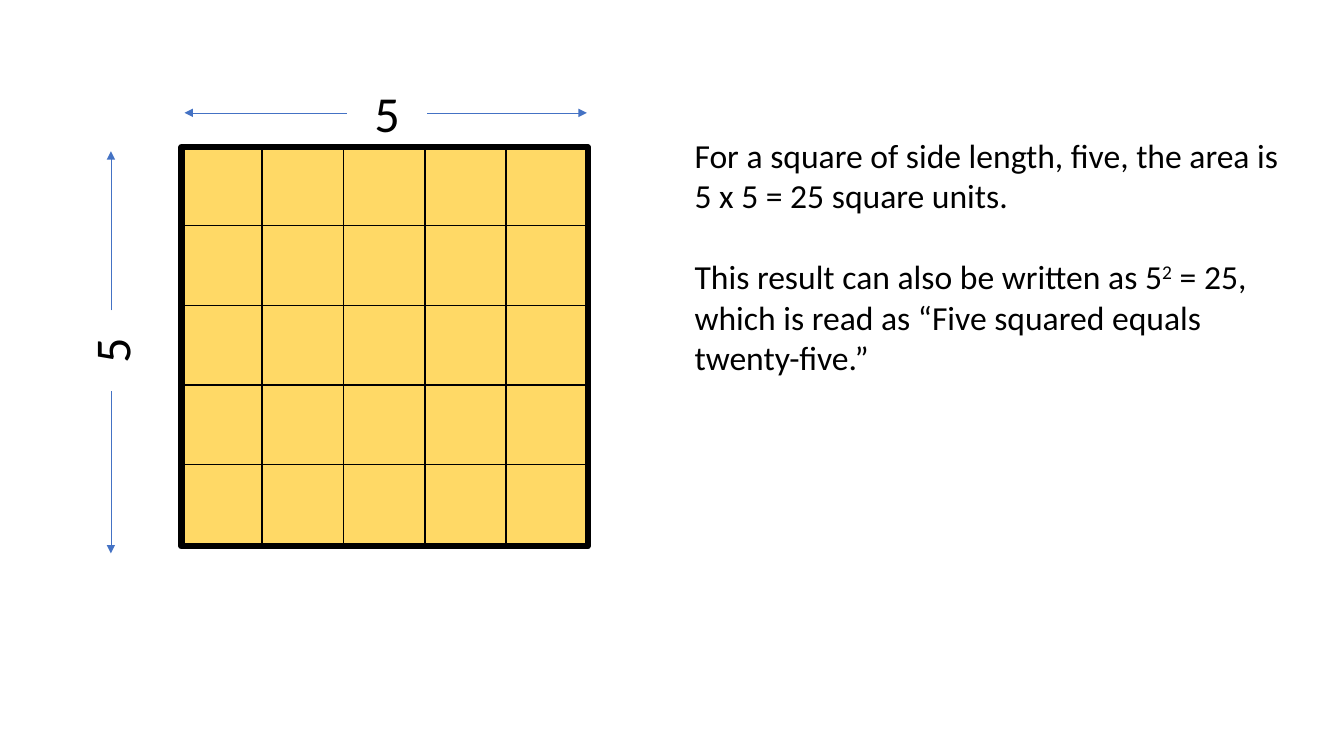
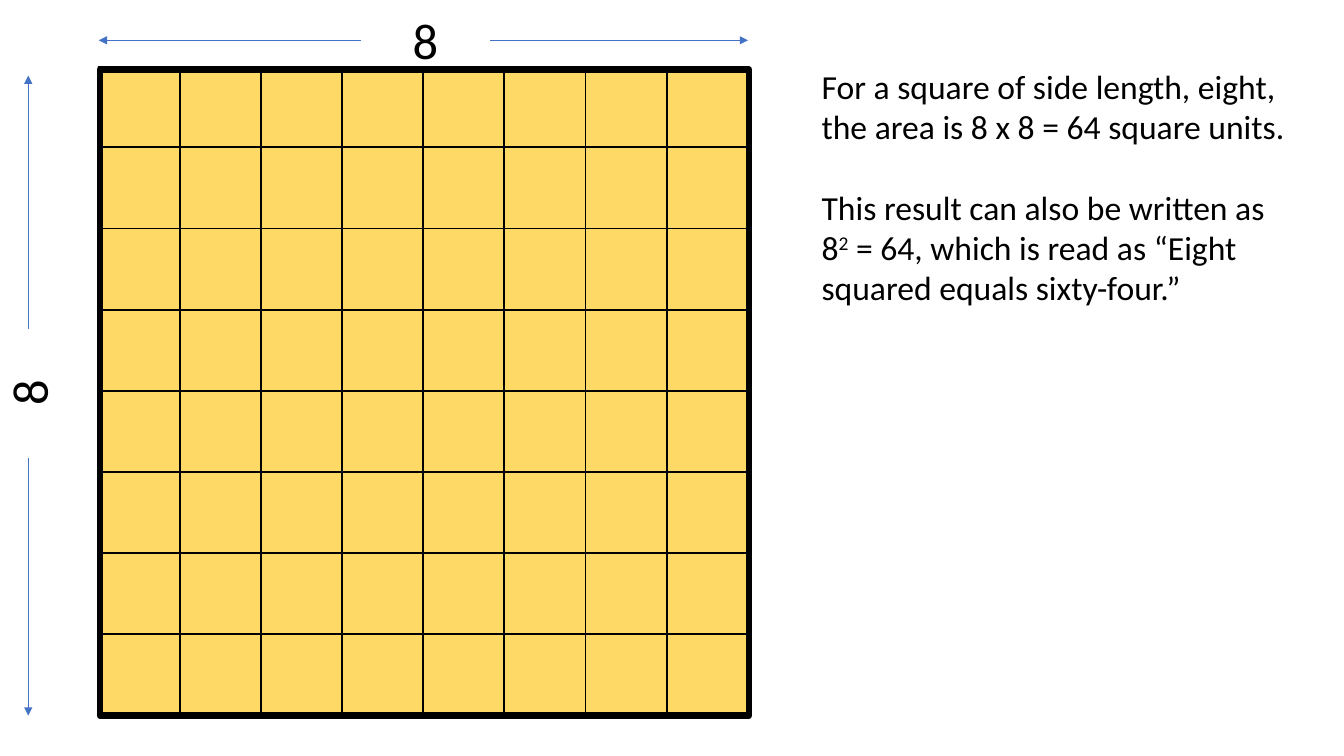
import pptx
import pptx.util
import pptx.dml.color
import pptx.enum.shapes
import pptx.enum.text
import lxml.etree
from dataclasses import dataclass

Inch = pptx.util.Inches
Pt = pptx.util.Pt

# Content: lengths in inches; spans are (start, end) of each measuring arrow
SLIDES = [
    dict(
        side=5, grid=(1.8, 1.45), pitch=(0.805, 0.79),
        frame=(1.8, 1.46, 4.03, 3.96), gap=0.8,
        across=dict(mid=(3.84, 1.12), span=(1.83, 5.82)),
        down=dict(mid=(1.1, 3.48), span=(1.5, 5.49)),
        note=(6.79, 1.29, 6.08, 2.83),
        text=[
            ["For a square of side length, five, the area is 5 x 5 = 25 square units."],
            ["This result can also be written as 5", "2",
             " = 25, which is read as “Five squared equals twenty-five.”"],
        ],
    ),
    dict(
        side=8, grid=(0.98, 0.66), pitch=(0.805, 0.805),
        frame=(0.99, 0.69, 6.44, 6.41), gap=1.28,
        across=dict(mid=(4.22, 0.4), span=(0.98, 7.42)),
        down=dict(mid=(0.28, 3.9), span=(0.75, 7.1)),
        note=(8.05, 0.6, 4.82, 2.83),
        text=[
            ["For a square of side length, eight, the area is 8 x 8 = 64 square units."],
            ["This result can also be written as 8", "2",
             " = 64, which is read as “Eight squared equals sixty-four.”"],
        ],
    ),
]


@dataclass(frozen=True)
class Theme:
    font: str = "Calibri"
    ink: str = "000000"
    tile: str = "FFD966"
    arrow: str = "4472C4"
    label: int = 36
    body: int = 24
    space: int = 29
    thin: float = 0.5
    edge: float = 1
    frame: float = 4.5
    cell: float = 0.8
    high: float = 0.71


T = Theme()


def tint(code):
    return pptx.dml.color.RGBColor.from_string(code)


def add_box(slide, at, weight, fill=None):
    kind = pptx.enum.shapes.MSO_SHAPE.RECTANGLE
    box = slide.shapes.add_shape(kind, *map(Inch, at))
    box.shadow.inherit = False
    if fill:
        box.fill.solid()
        box.fill.fore_color.rgb = tint(fill)
    else:
        box.fill.background()
    box.line.color.rgb = tint(T.ink)
    box.line.width = Pt(weight)


def add_text(slide, at, paras, size, align):
    box = slide.shapes.add_textbox(*map(Inch, at))
    frame = box.text_frame
    frame.word_wrap = True
    frame.auto_size = pptx.enum.text.MSO_AUTO_SIZE.SHAPE_TO_FIT_TEXT
    for i, parts in enumerate(paras):
        para = frame.paragraphs[0] if i == 0 else frame.add_paragraph()
        para.alignment = align
        para.font.name = T.font
        para.font.size = Pt(size)
        para.font.color.rgb = tint(T.ink)
        if i:
            para.space_before = Pt(T.space)
        for j, part in enumerate(parts):
            run = para.add_run()
            run.text = part
            if j == 1:  # the exponent
                run.font._element.set("baseline", "30000")
    return box


def add_arrow(slide, start, end):
    kind = pptx.enum.shapes.MSO_CONNECTOR.STRAIGHT
    line = slide.shapes.add_connector(kind, *map(Inch, start + end))
    line.line.color.rgb = tint(T.arrow)
    line.line.width = Pt(T.thin)
    space = "{http://schemas.openxmlformats.org/drawingml/2006/main}"
    tail = lxml.etree.SubElement(line.line._get_or_add_ln(), space + "tailEnd")
    tail.set("type", "triangle")
    lxml.etree.SubElement(line._element.spPr, space + "effectLst")
    return line


def add_size(slide, side, gap, mid, span, turn):
    """A number with an arrow to each end of the side it measures."""
    x, y = mid
    at = (x - gap / 2, y - T.high / 2, gap, T.high)
    label = add_text(slide, at, [[str(side)]], T.label,
                     pptx.enum.text.PP_ALIGN.CENTER)
    label.rotation = 270 if turn else 0
    for end, sign, site in zip(span, (-1, 1), (1, 3)):
        if turn:
            add_arrow(slide, (x, y + sign * gap / 2), (x, end))
        else:
            line = add_arrow(slide, (x + sign * gap / 2, y), (end, y))
            line.begin_connect(label, site)


def add_grid(slide, side, grid, pitch, frame):
    for row in range(side):
        for col in range(side):
            x = grid[0] + col * pitch[0]
            y = grid[1] + row * pitch[1]
            add_box(slide, (x, y, T.cell, T.cell), T.edge, T.tile)
    add_box(slide, frame, T.frame)


def main():
    deck = pptx.Presentation()
    deck.slide_width, deck.slide_height = Inch(13.33), Inch(7.5)
    for item in SLIDES:
        slide = deck.slides.add_slide(deck.slide_layouts[6])
        side, gap = item["side"], item["gap"]
        # Unit squares and outline
        add_grid(slide, side, item["grid"], item["pitch"], item["frame"])
        # Side lengths
        add_size(slide, side, gap, **item["across"], turn=False)
        add_size(slide, side, gap, **item["down"], turn=True)
        # Explanation
        add_text(slide, item["note"], item["text"], T.body,
                 pptx.enum.text.PP_ALIGN.LEFT)
    deck.save("out.pptx")


if __name__ == "__main__":
    main()
